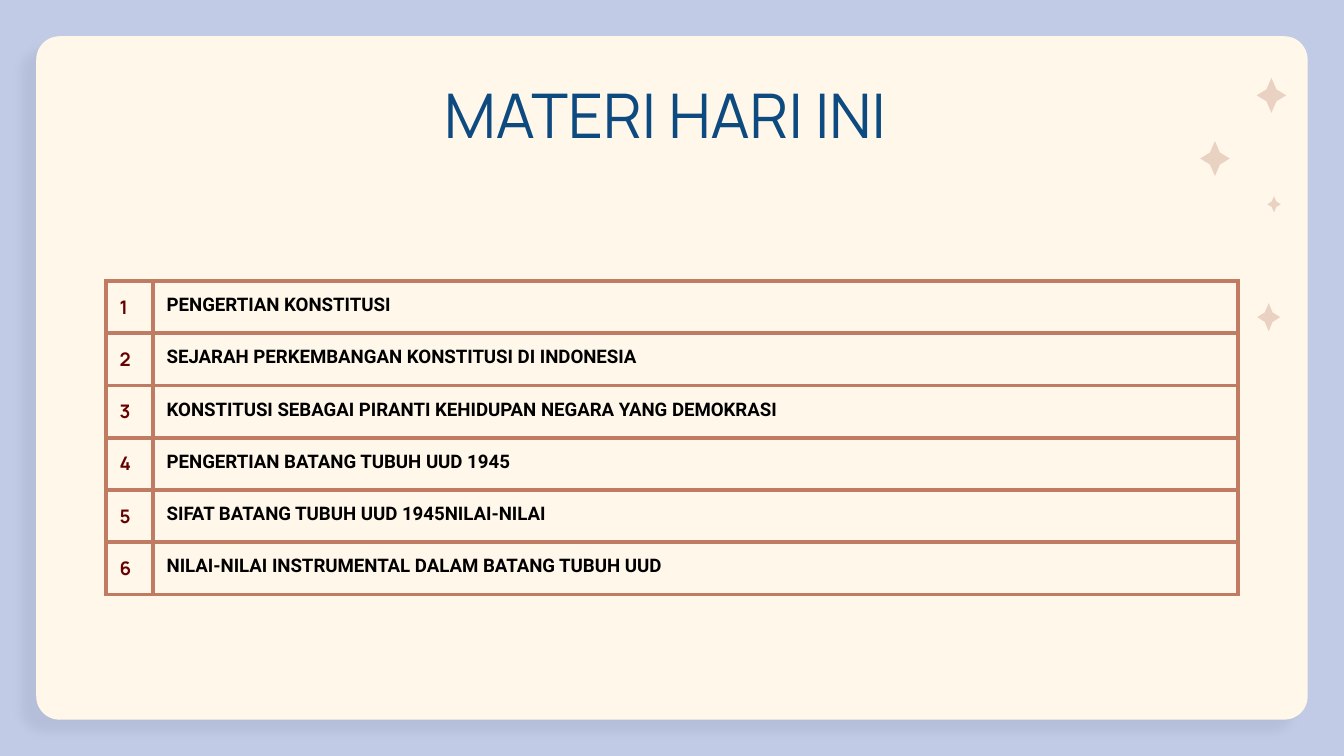
from lxml import etree
from pptx import Presentation
from pptx import util as u
from pptx.dml.color import RGBColor
from pptx.enum import shapes, text
from pptx.oxml import ns, parse_xml

# Content
TITLE = "MATERI HARI INI"
TOPICS = [
    "PENGERTIAN KONSTITUSI",
    "SEJARAH PERKEMBANGAN KONSTITUSI DI INDONESIA",
    "KONSTITUSI SEBAGAI PIRANTI KEHIDUPAN NEGARA YANG DEMOKRASI",
    "PENGERTIAN BATANG TUBUH UUD 1945",
    "SIFAT BATANG TUBUH UUD 1945NILAI-NILAI",
    "NILAI-NILAI INSTRUMENTAL DALAM BATANG TUBUH UUD",
]
STARS = [  # centre x, centre y, width, height
    (9.44, 2.36, 0.17, 0.21),
    (9.04, 1.18, 0.22, 0.26),
    (9.46, 0.71, 0.22, 0.26),
    (9.48, 1.52, 0.10, 0.12),
]
COLORS = {"back": "C2CBE6", "card": "FFF7EA", "shadow": "515B7A", "title": "0D4A80",
          "border": "BF7C63", "number": "670001", "topic": "000000", "star": "EAD2C3"}
FORMATS = {
    "title": {"name": "Manrope", "size": u.Pt(33), "bold": False},
    "number": {"name": "Manrope", "size": u.Pt(10), "bold": True},
    "topic": {"name": "Roboto", "size": u.Pt(10), "bold": True},
}
WIDTH = 10
HEIGHT = WIDTH * 9 / 16
MARGIN = 0.27
COLUMNS, ROW = (0.35, 8.07), 0.38
INNER = 0.34  # waist of a star as a share of its half size


def color(key):
    return RGBColor.from_string(COLORS[key])


def paint(shape, key):
    shape.fill.solid()
    shape.fill.fore_color.rgb = color(key)
    shape.line.fill.background()
    shape.shadow.inherit = False


def write(frame, words, style):
    para = frame.paragraphs[0]
    span = para.add_run()
    span.text = words
    for name, value in FORMATS[style].items():
        setattr(span.font, name, value)
    span.font.color.rgb = color(style)
    return para


def add_borders(cell):
    props = cell._tc.get_or_add_tcPr()
    for side in ("lnL", "lnR", "lnT", "lnB"):
        line = etree.SubElement(props, ns.qn(f"a:{side}"), w=str(u.Pt(2.25)))
        fill = etree.SubElement(line, ns.qn("a:solidFill"))
        etree.SubElement(fill, ns.qn("a:srgbClr"), val=COLORS["border"])


deck = Presentation()
deck.slide_width, deck.slide_height = u.Inches(WIDTH), u.Inches(HEIGHT)
page = deck.slides.add_slide(deck.slide_layouts[5])
page.background.fill.solid()
page.background.fill.fore_color.rgb = color("back")

# Card with a soft shadow, behind the title
card = page.shapes.add_shape(
    shapes.MSO_SHAPE.ROUNDED_RECTANGLE, u.Inches(MARGIN), u.Inches(MARGIN),
    u.Inches(WIDTH - 2 * MARGIN), u.Inches(HEIGHT - 2 * MARGIN))
card.adjustments[0] = 0.034
paint(card, "card")
card._element.spPr.find(ns.qn("a:effectLst")).append(parse_xml(
    f'<a:outerShdw {ns.nsdecls("a")} blurRad="{u.Pt(4.5)}" dist="{u.Pt(10.5)}" '
    f'dir="{137 * 60000}" algn="bl" rotWithShape="0"><a:srgbClr val="{COLORS["shadow"]}">'
    '<a:alpha val="10000"/></a:srgbClr></a:outerShdw>'))
page.shapes._spTree.insert(2, card._element)

# Title
title = page.shapes.title
title.left, title.top, title.width, title.height = map(u.Inches, (0.78, 0.49, 8.44, 0.63))
frame = title.text_frame
layout = {"margin_left": 0, "margin_top": 0, "margin_right": u.Inches(0.1), "margin_bottom": 0,
          "vertical_anchor": text.MSO_ANCHOR.BOTTOM, "auto_size": text.MSO_AUTO_SIZE.NONE,
          "word_wrap": True}
for name, value in layout.items():
    setattr(frame, name, value)
write(frame, TITLE, "title").alignment = text.PP_ALIGN.CENTER

# Table of numbered topics
table = page.shapes.add_table(
    len(TOPICS), len(COLUMNS), u.Inches(0.79), u.Inches(2.09),
    u.Inches(sum(COLUMNS)), u.Inches(ROW * len(TOPICS))).table
table.first_row = table.horz_banding = False
for column, width in zip(table.columns, COLUMNS):
    column.width = u.Inches(width)
for index, topic in enumerate(TOPICS):
    table.rows[index].height = u.Inches(ROW)
    parts = (("number", str(index + 1), text.MSO_ANCHOR.MIDDLE),
             ("topic", topic, text.MSO_ANCHOR.TOP))
    for place, (style, words, anchor) in enumerate(parts):
        cell = table.cell(index, place)
        for side in ("left", "top", "right", "bottom"):
            setattr(cell, f"margin_{side}", u.Inches(0.1))
        cell.vertical_anchor = anchor
        add_borders(cell)
        cell.fill.background()
        write(cell.text_frame, words, style)

# Four-pointed stars
OUTLINE = [(0, -1), (-INNER, -INNER), (-1, 0), (-INNER, INNER),
           (0, 1), (INNER, INNER), (1, 0), (INNER, -INNER)]
for x, y, width, height in STARS:
    points = [(u.Inches(x + dx * width / 2), u.Inches(y + dy * height / 2))
              for dx, dy in OUTLINE]
    builder = page.shapes.build_freeform(*points[0])
    builder.add_line_segments(points[1:], close=True)
    paint(builder.convert_to_shape(), "star")

deck.save("out.pptx")
